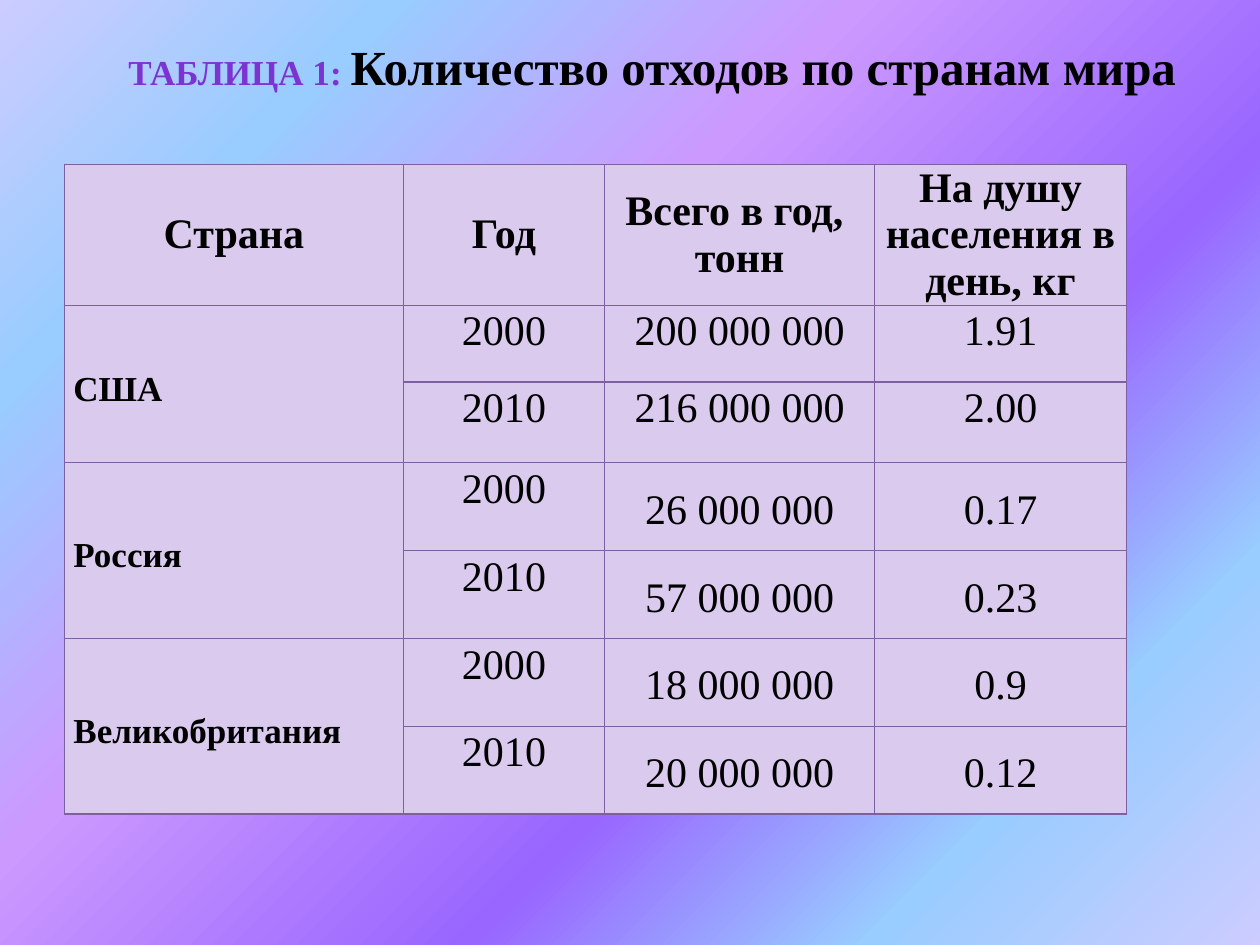
from pptx import Presentation
from pptx.dml.color import RGBColor
from pptx.enum.text import MSO_ANCHOR as Anchor, PP_ALIGN as Align
from pptx.oxml import parse_xml
from pptx.oxml.ns import nsdecls, qn
from pptx.util import Cm, Pt

COLORS = {
    "text": "000000",
    "label": "7B34D2",
    "cell": "DACAEE",
    "border": "7D60A0",
    "lavender": "CCCCFF",
    "sky": "99CCFF",
    "pink": "CC99FF",
    "violet": "9966FF",
}
BACKGROUND_STOPS = [(0, "lavender"), (18, "sky"), (39, "pink"),
                    (64, "violet"), (82, "sky"), (100, "lavender")]
FONT = "Times New Roman"
LINE = Pt(14.2)

COLUMN_WIDTHS = [6.83, 4.06, 5.44, 5.08]
ROW_HEIGHTS = [2.84, 1.55, 1.63] + [1.77] * 4
HEADERS = [["Страна"], ["Год"], ["Всего в год, ", "тонн"],
           ["На душу населения в день, кг"]]
YEARS = ["2000", "2010"]
COUNTRIES = [
    ("США", [("200 000 000", "1.91"), ("216 000 000", "2.00")]),
    ("Россия", [("26 000 000", "0.17"), ("57 000 000", "0.23")]),
    ("Великобритания", [("18 000 000", "0.9"), ("20 000 000", "0.12")]),
]


class SlideBuilder:
    def __init__(self, presentation):
        self.slide = presentation.slides.add_slide(presentation.slide_layouts[5])

    def background(self, stops, angle):
        stop_xml = "".join(
            f'<a:gs pos="{position * 1000}"><a:srgbClr val="{COLORS[name]}"/></a:gs>'
            for position, name in stops)
        background = parse_xml(
            f'<p:bg {nsdecls("p", "a")}><p:bgPr><a:gradFill><a:gsLst>{stop_xml}</a:gsLst>'
            f'<a:lin ang="{angle * 60000}" scaled="0"/></a:gradFill>'
            '<a:effectLst/></p:bgPr></p:bg>')
        self.slide.element.find(qn("p:cSld")).insert(0, background)

    def run(self, paragraph, text, size, bold=False, color="text"):
        run = paragraph.add_run()
        run.text = text
        font = run.font
        font.name, font.size, font.bold = FONT, Pt(size), bold
        font.color.rgb = RGBColor.from_string(COLORS[color])

    def title(self, left, top, width, height, runs):
        title = self.slide.shapes.title
        title.left, title.top = Cm(left), Cm(top)
        title.width, title.height = Cm(width), Cm(height)
        frame = title.text_frame
        frame.word_wrap = True
        frame.vertical_anchor = Anchor.TOP
        frame.margin_left, frame.margin_top = Cm(1.5), Cm(0.18)
        paragraph = frame.paragraphs[0]
        paragraph.alignment = Align.LEFT
        for text, size, color in runs:
            self.run(paragraph, text, size, True, color)

    def table(self, left, top, widths, heights):
        frame = self.slide.shapes.add_table(
            len(heights), len(widths), Cm(left), Cm(top),
            Cm(sum(widths)), Cm(sum(heights)))
        table = frame.table
        table.first_row = table.horz_banding = False
        for column, width in zip(table.columns, widths):
            column.width = Cm(width)
        for row, height in zip(table.rows, heights):
            row.height = Cm(height)
        for cell in table.iter_cells():
            self.cell_style(cell)
        return table

    def cell_style(self, cell):
        cell.margin_left = cell.margin_right = Cm(0.18)
        cell.margin_top = cell.margin_bottom = 0
        cell.fill.solid()
        cell.fill.fore_color.rgb = RGBColor.from_string(COLORS["cell"])
        properties = cell._tc.get_or_add_tcPr()
        for index, side in enumerate(("lnL", "lnR", "lnT", "lnB")):
            properties.insert(index, parse_xml(
                f'<a:{side} {nsdecls("a")} w="{Pt(0.75)}"><a:solidFill>'
                f'<a:srgbClr val="{COLORS["border"]}"/></a:solidFill></a:{side}>'))

    def cell_text(self, cell, lines, size=24, bold=False, align=Align.CENTER,
                  anchor=Anchor.MIDDLE, spacing=None, margin_top=0):
        cell.vertical_anchor = anchor
        cell.margin_top = margin_top
        frame = cell.text_frame
        for index, line in enumerate(lines):
            paragraph = frame.add_paragraph() if index else frame.paragraphs[0]
            paragraph.alignment = align
            paragraph.line_spacing = spacing
            self.run(paragraph, line, size, bold)


def main():
    presentation = Presentation()
    presentation.slide_width, presentation.slide_height = Cm(25.4), Cm(19.05)
    builder = SlideBuilder(presentation)
    builder.background(BACKGROUND_STOPS, 45)
    builder.title(1.09, 0.56, 23.11, 2.24, [
        ("ТАБЛИЦА 1: ", 20, "label"),
        ("Количество отходов по странам мира", 28, "text")])

    table = builder.table(1.3, 3.31, COLUMN_WIDTHS, ROW_HEIGHTS)
    for column, lines in enumerate(HEADERS):
        builder.cell_text(table.cell(0, column), lines, bold=True)

    lowered = {"spacing": LINE, "margin_top": LINE}
    top_style = {"anchor": Anchor.TOP, **lowered}
    middle_style = {"spacing": 1.15}
    for group, (country, records) in enumerate(COUNTRIES):
        first = 1 + group * len(YEARS)
        country_cell = table.cell(first, 0)
        country_cell.merge(table.cell(first + len(YEARS) - 1, 0))
        builder.cell_text(country_cell, [country], 20, True, Align.JUSTIFY, **lowered)
        value_style = middle_style if group else top_style
        for row, (year, values) in enumerate(zip(YEARS, records), first):
            builder.cell_text(table.cell(row, 1), [year], **top_style)
            for column, value in enumerate(values, 2):
                builder.cell_text(table.cell(row, column), [value], **value_style)

    presentation.save("out.pptx")


if __name__ == "__main__":
    main()
